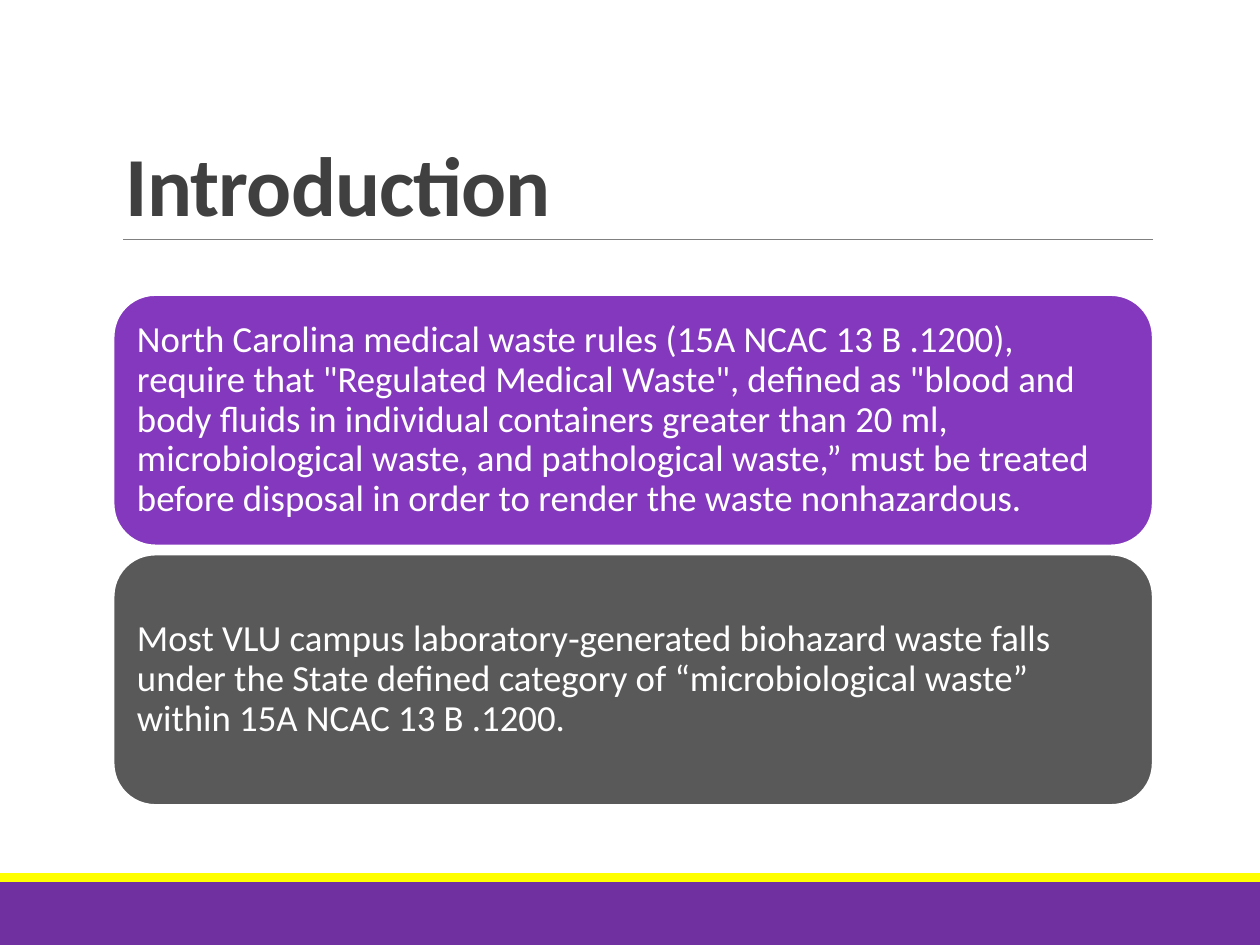
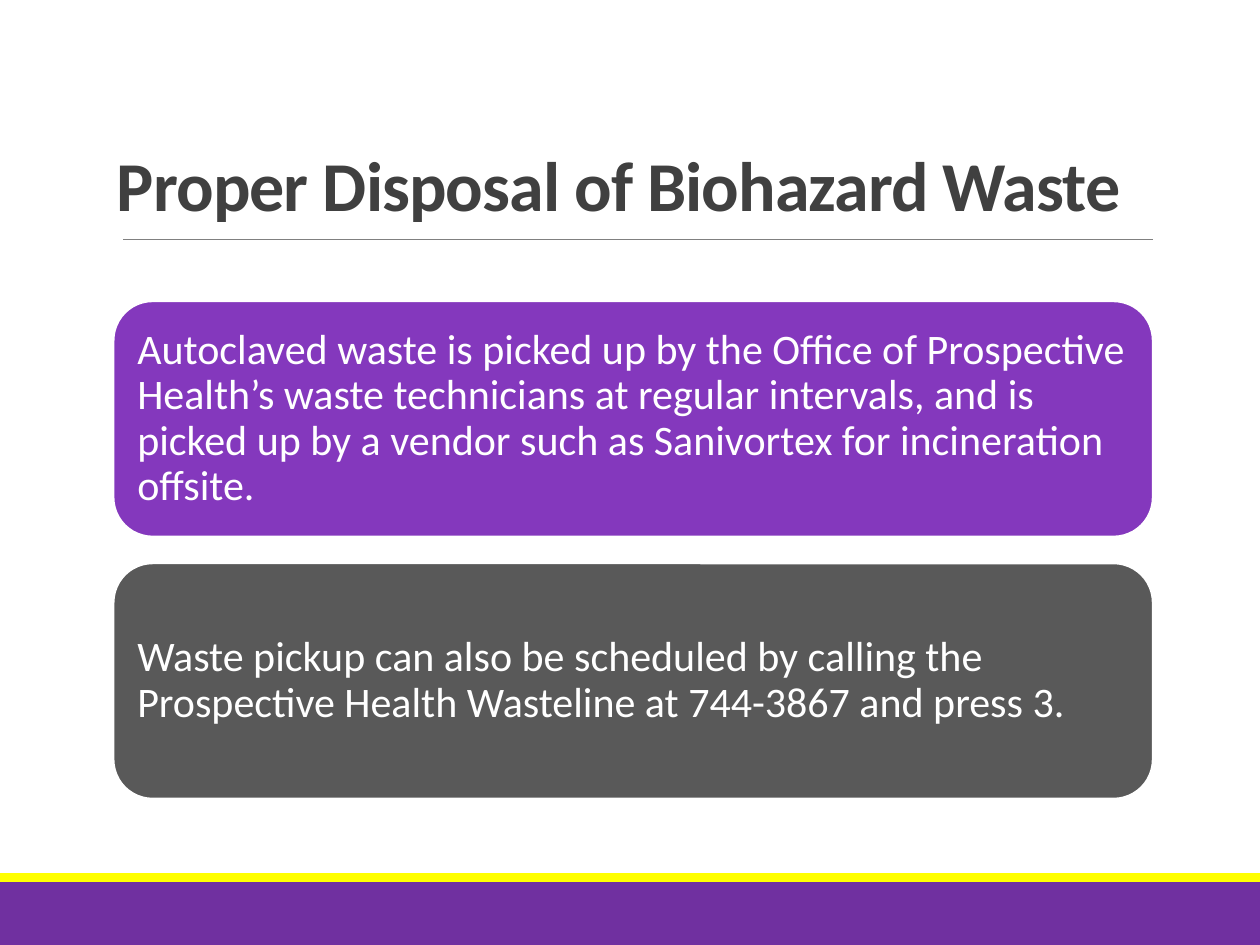
from lxml import etree
from pptx import Presentation
from pptx.dml.color import RGBColor
from pptx.enum.shapes import MSO_CONNECTOR, MSO_SHAPE
from pptx.enum.text import MSO_ANCHOR, PP_ALIGN
from pptx.oxml.ns import qn
from pptx.util import Inches, Pt

RECT, ROUND = MSO_SHAPE.RECTANGLE, MSO_SHAPE.ROUNDED_RECTANGLE
STRAIGHT = MSO_CONNECTOR.STRAIGHT
MIDDLE, BOTTOM = MSO_ANCHOR.MIDDLE, MSO_ANCHOR.BOTTOM
LEFT = PP_ALIGN.LEFT

PURPLE = RGBColor(0x70, 0x30, 0xA0)
VIOLET = RGBColor(0x84, 0x38, 0xBD)
YELLOW = RGBColor(0xFF, 0xFF, 0x00)
SLATE = RGBColor(0x59, 0x59, 0x59)
INK = RGBColor(0x40, 0x40, 0x40)
GREY = RGBColor(0x80, 0x80, 0x80)
WHITE = RGBColor(0xFF, 0xFF, 0xFF)

FONT = "Calibri"
WIDTH, HEIGHT = Inches(10), Inches(7.5)
COLS, ROWS = 100, 75
EDGE, SPAN = 9, 82.5  # left column and width of the content
MID = 43.65  # row on which the card stack is centred


class Deck:
    def __init__(self):
        self.prs = Presentation()
        self.prs.slide_width, self.prs.slide_height = WIDTH, HEIGHT
        self.slide = None

    def area(self, col, row, wide, high):
        """Turn grid columns and rows into slide lengths."""
        return (round(WIDTH * col / COLS), round(HEIGHT * row / ROWS),
                round(WIDTH * wide / COLS), round(HEIGHT * high / ROWS))

    def start(self):
        """Add a slide with the footer bands and the title rule."""
        self.slide = self.prs.slides.add_slide(self.prs.slide_layouts[6])
        self.block(RECT, (0, 70, COLS, 5), PURPLE)
        self.block(RECT, (0, 69.3, COLS, 0.7), YELLOW)
        self.rule(9.8, EDGE + SPAN, 19)

    def block(self, kind, cells, fill, line=None):
        shape = self.slide.shapes.add_shape(kind, *self.area(*cells))
        shape.shadow.inherit = False
        shape.fill.solid()
        shape.fill.fore_color.rgb = fill
        if line is None:
            shape.line.fill.background()
        else:
            shape.line.color.rgb = line
            shape.line.width = Pt(1.25)
        return shape

    def rule(self, start, end, row):
        x, y, wide, _ = self.area(start, row, end - start, 0)
        line = self.slide.shapes.add_connector(STRAIGHT, x, y, x + wide, y)
        line.line.color.rgb = GREY
        line.line.width = Pt(0.5)
        props = line._element.spPr
        etree.SubElement(props, qn("a:effectLst"))

    def label(self, shape, text, size, color, anchor, lead):
        """Set one left-aligned paragraph and return its run."""
        frame = shape.text_frame
        frame.word_wrap = True
        frame.vertical_anchor = anchor
        para = frame.paragraphs[0]
        para.alignment = LEFT
        para.line_spacing = lead
        run = para.add_run()
        run.text = text
        run.font.name = FONT
        run.font.size = Pt(size)
        run.font.color.rgb = color
        return run

    def title(self, text, size, col, row):
        box = self.slide.shapes.add_textbox(*self.area(col, row, SPAN, 15.9))
        run = self.label(box, text, size, INK, BOTTOM, 0.85)
        run.font.bold = True
        run.font._element.set("spc", "-50")

    def cards(self, texts, size, high, gap, inset):
        """Stack one rounded card per text around the middle row."""
        step = high + gap
        top = MID - (step * len(texts) - gap) / 2
        for i, (text, fill) in enumerate(zip(texts, (VIOLET, SLATE))):
            cells = (EDGE, top + i * step, SPAN, high)
            card = self.block(ROUND, cells, fill, WHITE)
            frame = card.text_frame
            frame.margin_left = frame.margin_right = Inches(inset)
            frame.margin_top = frame.margin_bottom = Inches(inset)
            self.label(card, text, size, WHITE, MIDDLE, 0.9)


def main():
    deck = Deck()

    deck.start()
    deck.title("Introduction", 48, EDGE, 3.1)
    deck.cards((
        "North Carolina medical waste rules (15A NCAC 13 B .1200), require "
        'that "Regulated Medical Waste", defined as "blood and body fluids '
        "in individual containers greater than 20 ml, microbiological waste, "
        "and pathological waste,” must be treated before disposal in order "
        "to render the waste nonhazardous.",
        "Most VLU campus laboratory‐generated biohazard waste falls under "
        "the State defined category of “microbiological waste” within "
        "15A NCAC 13 B .1200.",
    ), size=21, high=19.9, gap=0.7, inset=0.09)

    deck.start()
    deck.title("Proper Disposal of Biohazard Waste", 40, 8.3, 2.5)
    deck.cards((
        "Autoclaved waste is picked up by the Office of Prospective Health’s "
        "waste technicians at regular intervals, and is picked up by a "
        "vendor such as Sanivortex for incineration offsite.",
        "Waste pickup can also be scheduled by calling the Prospective "
        "Health Wasteline at 744-3867 and press 3.",
    ), size=24, high=18.7, gap=2.1, inset=0.1)

    deck.prs.save("out.pptx")


if __name__ == "__main__":
    main()
